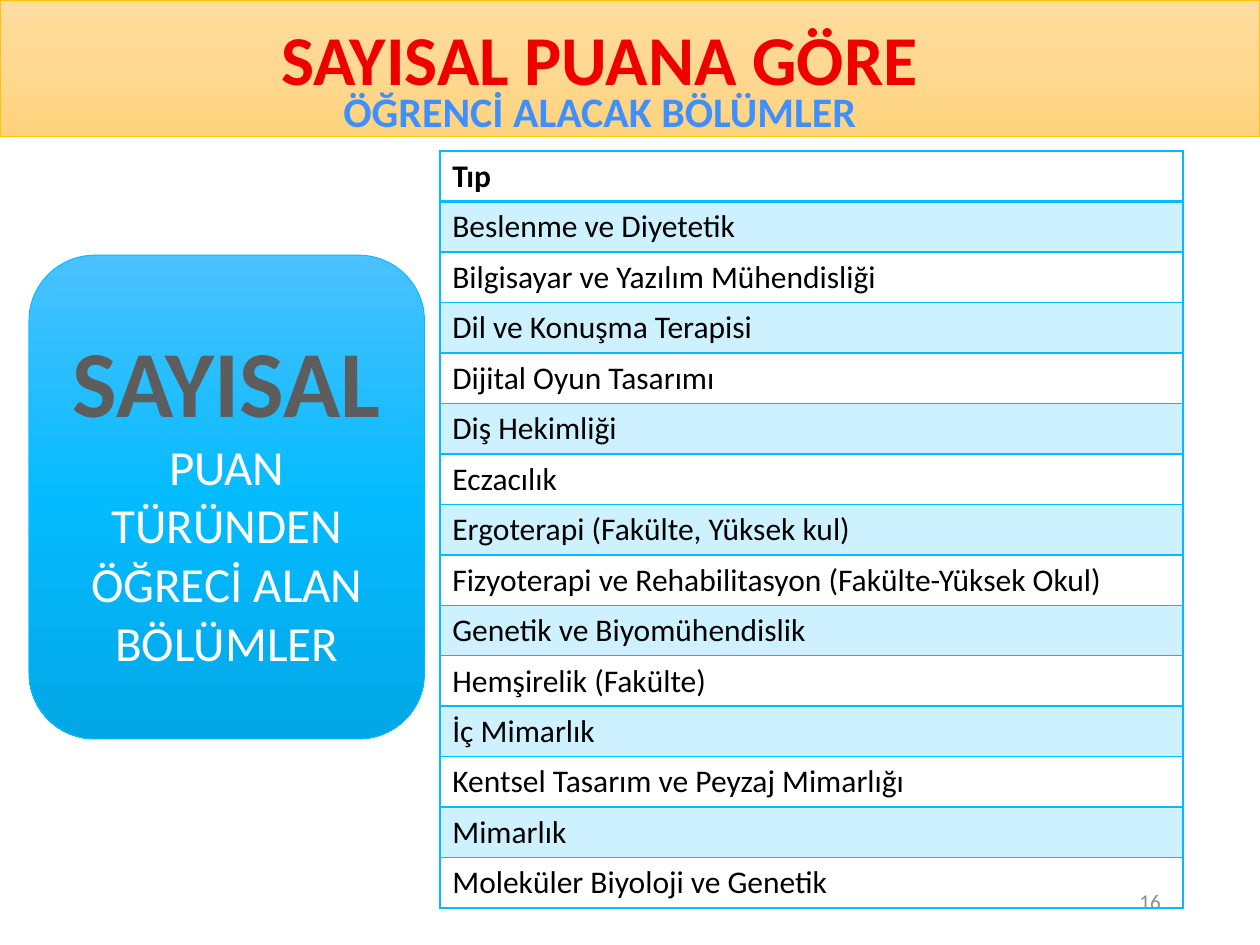
from lxml import etree
from pptx import Presentation
from pptx import util as u
from pptx.dml.color import RGBColor
from pptx.enum import shapes, text
from pptx.oxml.ns import qn

W, H = 10, 7.5
COLORS = {
    "sky": "05BBFF", "sky_light": "4BC1FF", "sky_dark": "02A7E5",
    "gold": "FFC30B", "gold_light": "FFDD9F", "gold_mid": "FFD891",
    "gold_dark": "FFD37D", "red": "EF0000", "blue": "3F90FF",
    "dark": "5D5D5D", "gray": "8C8C8C", "black": "000000", "white": "FFFFFF",
}
DEPARTMENTS = [
    "Tıp", "Beslenme ve Diyetetik", "Bilgisayar ve Yazılım Mühendisliği",
    "Dil ve Konuşma Terapisi", "Dijital Oyun Tasarımı", "Diş Hekimliği",
    "Eczacılık", "Ergoterapi (Fakülte, Yüksek kul)",
    "Fizyoterapi ve Rehabilitasyon (Fakülte-Yüksek Okul)",
    "Genetik ve Biyomühendislik", "Hemşirelik (Fakülte)", "İç Mimarlık",
    "Kentsel Tasarım ve Peyzaj Mimarlığı", "Mimarlık",
    "Moleküler Biyoloji ve Genetik",
]
ALIGN = text.PP_ALIGN
ANCHOR = text.MSO_ANCHOR


def rgb(name):
    return RGBColor.from_string(COLORS[name])


def box(x, y, w, h):
    """Turn shares of the slide's size into lengths."""
    return u.Inches(x * W), u.Inches(y * H), u.Inches(w * W), u.Inches(h * H)


def add_run(p, content, size=18, color="black", bold=False, align=ALIGN.LEFT):
    p.alignment = align
    r = p.add_run()
    r.text = content
    r.font.name = "Calibri"
    r.font.size = u.Pt(size)
    r.font.bold = bold
    r.font.color.rgb = rgb(color)


def add_text(s, area, content, anchor=ANCHOR.TOP, **fmt):
    tf = s.shapes.add_textbox(*box(*area)).text_frame
    tf.word_wrap = True
    tf.vertical_anchor = anchor
    add_run(tf.paragraphs[0], content, **fmt)


def add_panel(s, kind, area, stops, line):
    """Add a shape with an even top-to-bottom gradient."""
    sp = s.shapes.add_shape(kind, *box(*area))
    sp.shadow.inherit = False
    sp.fill.gradient()
    sp.fill.gradient_angle = 270
    gs_list = sp._element.spPr.find(".//" + qn("a:gsLst"))
    for gs in list(gs_list):
        gs_list.remove(gs)
    for i, name in enumerate(stops):
        pos = str(100000 * i // (len(stops) - 1))
        gs = etree.SubElement(gs_list, qn("a:gs"), pos=pos)
        etree.SubElement(gs, qn("a:srgbClr"), val=COLORS[name])
    sp.line.color.rgb = rgb(line)
    sp.line.width = u.Pt(0.5)
    return sp


def set_borders(cell, color, **widths):
    tc_pr = cell._tc.get_or_add_tcPr()
    for i, side in enumerate("LRTB"):
        ln = etree.Element(qn("a:ln" + side), w=str(u.Pt(widths.get(side, 1))))
        fill = etree.SubElement(ln, qn("a:solidFill"))
        etree.SubElement(fill, qn("a:srgbClr"), val=COLORS[color])
        tc_pr.insert(i, ln)


def fill_cell(cell, color, alpha):
    cell.fill.solid()
    cell.fill.fore_color.rgb = rgb(color)
    clr = cell._tc.tcPr.find(".//" + qn("a:srgbClr"))
    etree.SubElement(clr, qn("a:alpha"), val=str(alpha * 1000))


def add_list(s, area, items):
    """Add a one-column table: bold first row, every second row tinted."""
    table = s.shapes.add_table(len(items), 1, *box(*area)).table
    table.first_row = table.horz_banding = False
    for i, item in enumerate(items):
        cell = table.cell(i, 0)
        add_run(cell.text_frame.paragraphs[0], item, bold=i == 0)
        if i % 2:
            fill_cell(cell, "sky", 20)
        else:
            cell.fill.background()
        set_borders(cell, "sky", T=2 if i == 1 else 1, B=2 if i == 0 else 1)


def main():
    prs = Presentation()
    prs.slide_width, prs.slide_height = u.Inches(W), u.Inches(H)
    s = prs.slides.add_slide(prs.slide_layouts[6])

    # Score type panel
    sp = add_panel(s, shapes.MSO_SHAPE.ROUNDED_RECTANGLE,
                   (0.023, 0.27, 0.314, 0.512),
                   ["sky_light", "sky", "sky_dark"], "sky")
    tf = sp.text_frame
    tf.word_wrap = True
    tf.vertical_anchor = ANCHOR.MIDDLE
    p = tf.paragraphs[0]
    add_run(p, "SAYISAL", size=54, color="dark", bold=True, align=ALIGN.CENTER)
    add_run(p, " PUAN TÜRÜNDEN ÖĞRECİ ALAN BÖLÜMLER", size=28, color="white",
            align=ALIGN.CENTER)

    # Header band and titles
    add_panel(s, shapes.MSO_SHAPE.RECTANGLE, (0, 0, 1, 0.144),
              ["gold_light", "gold_mid", "gold_dark"], "gold")
    add_text(s, (-0.018, 0.01, 1, 0.157), "SAYISAL PUANA GÖRE ",
             size=40, color="red", bold=True, align=ALIGN.CENTER)
    add_text(s, (0.027, 0.084, 0.898, 0.067), "ÖĞRENCİ ALACAK BÖLÜMLER",
             size=24, color="blue", bold=True, align=ALIGN.CENTER)

    # Page number
    add_text(s, (0.706, 0.927, 0.225, 0.053), "16", anchor=ANCHOR.MIDDLE,
             size=12, color="gray", align=ALIGN.RIGHT)

    # Departments
    add_list(s, (0.349, 0.16, 0.59, 0.8), DEPARTMENTS)
    prs.save("out.pptx")


if __name__ == "__main__":
    main()
